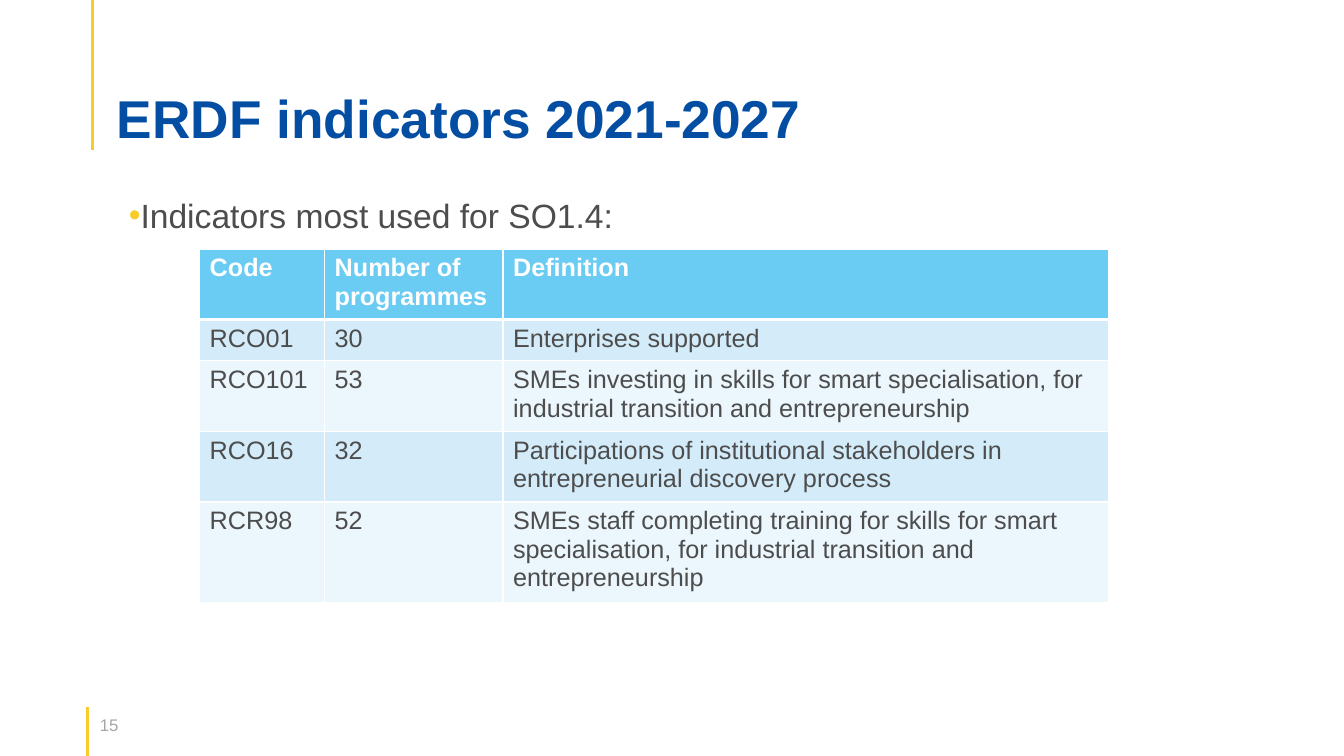
"""Build the slide on ERDF indicators 2021-2027 with its table of codes."""
from dataclasses import dataclass

from lxml import etree
from pptx import Presentation
from pptx import util as u
from pptx.dml.color import RGBColor
from pptx.enum import shapes, text
from pptx.oxml.ns import qn


@dataclass(frozen=True)
class Theme:
    font: str = "Arial"
    blue: str = "034EA2"
    gold: str = "F8CC29"
    ink: str = "4D4D4D"
    gray: str = "A6A6A6"
    white: str = "FFFFFF"
    head: str = "6ACBF3"
    bands: tuple = ("D4ECFA", "EBF6FD")
    title: int = 38
    body: int = 24
    cell: int = 18
    small: int = 12


theme = Theme()


def write(para, words, size, color, bold=False):
    run = para.add_run()
    run.text = words
    run.font.name = theme.font
    run.font.size = u.Pt(size)
    run.font.bold = bold
    run.font.color.rgb = RGBColor.from_string(color)


def edge(cell, spot, side, width):
    line = etree.Element(qn(f"a:ln{side}"), w=str(u.Pt(width)))
    fill = etree.SubElement(line, qn("a:solidFill"))
    etree.SubElement(fill, qn("a:srgbClr"), val=theme.white)
    cell._tc.get_or_add_tcPr().insert(spot, line)


deck = Presentation()
deck.slide_width = u.Inches(13.33)
deck.slide_height = u.Inches(7.5)
slide = deck.slides.add_slide(deck.slide_layouts[5])

number = slide.shapes.add_textbox(u.Inches(0.99), u.Inches(7.04), u.Inches(0.49), u.Inches(0.3))
frame = number.text_frame
frame.word_wrap = True
frame.margin_left = frame.margin_right = 0
write(frame.paragraphs[0], "15", theme.small, theme.gray)

for x, top, end in ((0.87, 7.01, 7.5), (0.92, 0, 1.49)):
    rule = slide.shapes.add_connector(
        shapes.MSO_CONNECTOR.STRAIGHT, u.Inches(x), u.Inches(top), u.Inches(x), u.Inches(end))
    rule.line.color.rgb = RGBColor.from_string(theme.gold)
    rule.line.width = u.Pt(2.25)
    etree.SubElement(rule._element.spPr, qn("a:effectLst"))

title = slide.shapes.title
title.left, title.top = u.Inches(1.06), u.Inches(0.63)
title.width, title.height = u.Inches(11.22), u.Inches(0.86)
frame = title.text_frame
frame.auto_size = text.MSO_AUTO_SIZE.NONE
frame.vertical_anchor = text.MSO_ANCHOR.BOTTOM
frame.margin_bottom = 0
para = frame.paragraphs[0]
para.alignment = text.PP_ALIGN.LEFT
para.line_spacing = 0.9
write(para, "ERDF indicators 2021-2027", theme.title, theme.blue, True)

body = slide.shapes.add_textbox(u.Inches(1.18), u.Inches(1.88), u.Inches(11.23), u.Inches(4.56))
body.text_frame.word_wrap = True
para = body.text_frame.paragraphs[0]
props = para._p.get_or_add_pPr()
props.set("marL", "0")
props.set("indent", str(u.Inches(-0.38)))
tint = etree.SubElement(props, qn("a:buClr"))
etree.SubElement(tint, qn("a:srgbClr"), val=theme.gold)
etree.SubElement(props, qn("a:buFont"), typeface=theme.font)
etree.SubElement(props, qn("a:buChar"), char="•")
para.space_after = u.Pt(18)
write(para, "Indicators most used for SO1.4:", theme.body, theme.ink)

rows = (
    ("Code", "Number of programmes", "Definition"),
    ("RCO01", "30", "Enterprises supported"),
    ("RCO101", "53", "SMEs investing in skills for smart specialisation, "
     "for industrial transition and entrepreneurship"),
    ("RCO16", "32", "Participations of institutional stakeholders in "
     "entrepreneurial discovery process"),
    ("RCR98", "52", "SMEs staff completing training for skills for smart "
     "specialisation, for industrial transition and entrepreneurship"),
)
widths = (1.24, 1.77, 6.01)
heights = (0.66, 0.41, 0.66, 0.66, 0.93)
table = slide.shapes.add_table(
    len(rows), len(widths), u.Inches(1.98), u.Inches(2.47),
    u.Inches(sum(widths)), u.Inches(sum(heights))).table
for col, width in zip(table.columns, widths):
    col.width = u.Inches(width)
for i, row in enumerate(rows):
    table.rows[i].height = u.Inches(heights[i])
    for j, words in enumerate(row):
        cell = table.cell(i, j)
        cell.fill.solid()
        fill = theme.bands[(i - 1) % 2] if i else theme.head
        cell.fill.fore_color.rgb = RGBColor.from_string(fill)
        for spot, side in enumerate("LRTB"):
            thick = (i, side) in ((0, "B"), (1, "T"))
            edge(cell, spot, side, 3 if thick else 1)
        color = theme.ink if i else theme.white
        write(cell.text_frame.paragraphs[0], words, theme.cell, color, i == 0)

deck.save("out.pptx")
